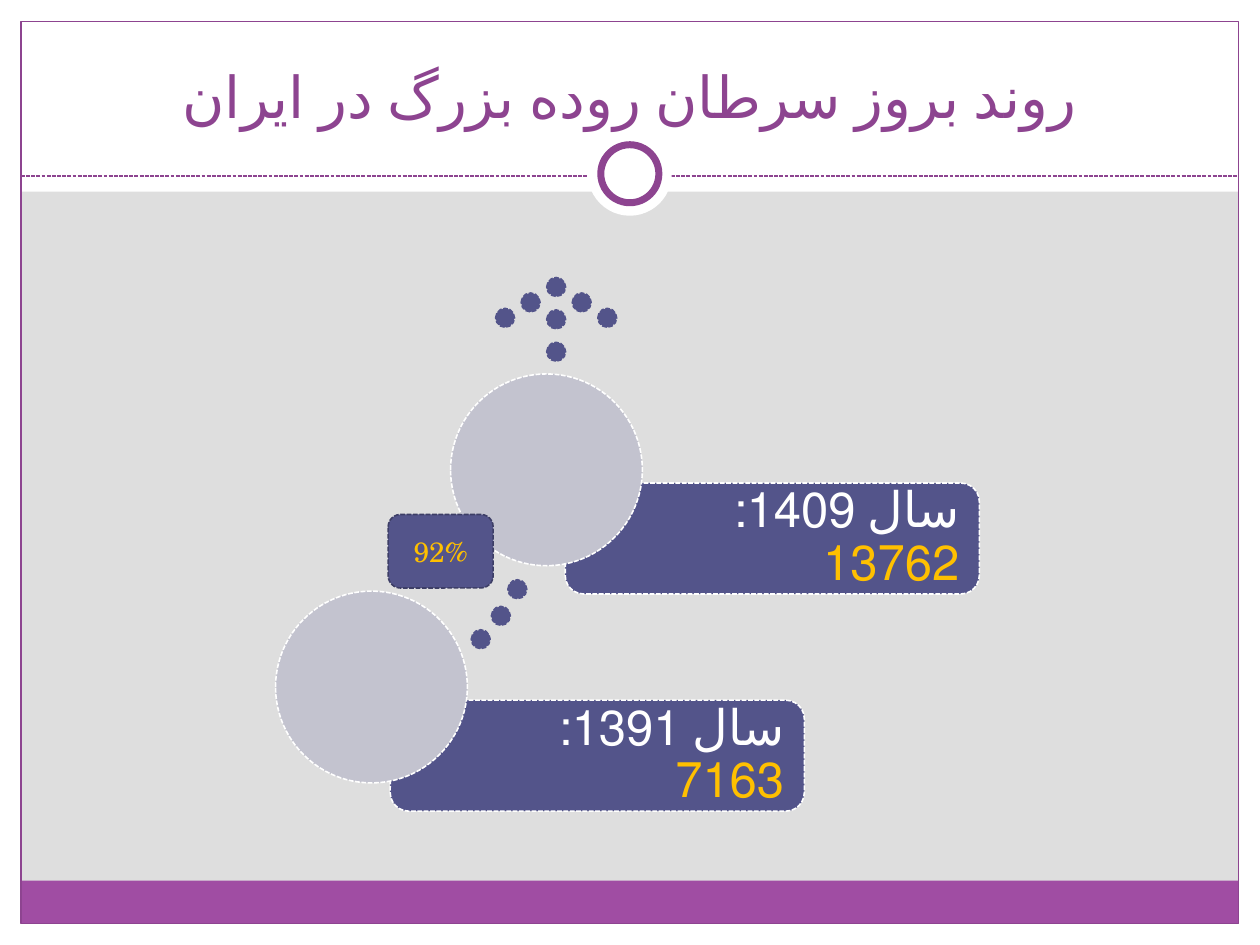
import pptx
import pptx.util
import pptx.dml.color
import pptx.enum.dml
import pptx.enum.shapes
import pptx.enum.text
import pptx.oxml
import pptx.oxml.ns

Pt = pptx.util.Pt
RGB = pptx.dml.color.RGBColor
KIND = pptx.enum.shapes.MSO_SHAPE
ALIGN = pptx.enum.text.PP_ALIGN
ANCHOR = pptx.enum.text.MSO_ANCHOR
DASH = pptx.enum.dml.MSO_LINE.SQUARE_DOT

WHITE = RGB(0xFF, 0xFF, 0xFF)
GREY = RGB(0xDE, 0xDE, 0xDE)
PURPLE = RGB(0x8D, 0x44, 0x90)
BAND = RGB(0xA0, 0x4D, 0xA3)
INDIGO = RGB(0x53, 0x54, 0x8A)
DARK = RGB(0x3D, 0x3E, 0x66)
PALE = RGB(0xC3, 0xC3, 0xCF)
GOLD = RGB(0xFF, 0xC0, 0x00)
FONT = "TeX Gyre Schola"
WIDE, HIGH = 720, 540
DOT = 10.8


def add_shape(slide, kind, box, fill=None, line=None, width=0.9, dash=False):
    shape = slide.shapes.add_shape(kind, *map(Pt, box))
    shape.shadow.inherit = False
    if fill is None:
        shape.fill.background()
    else:
        shape.fill.solid()
        shape.fill.fore_color.rgb = fill
    if line is None:
        shape.line.fill.background()
    else:
        shape.line.color.rgb = line
        shape.line.width = Pt(width)
        if dash:
            shape.line.dash_style = DASH
    return shape


def add_run(para, text, size, color, lang="fa-IR"):
    run = para.add_run()
    run.text = text
    run.font.size = Pt(size)
    run.font.name = FONT
    run.font.color.rgb = color
    run._r.get_or_add_rPr().set("lang", lang)


def add_frame(slide, box):
    """Draw white margins, the border, the footer band and the ringed rule."""
    left, top, wide, high = box
    right, base = left + wide, top + high
    rule, mid = 100.6, left + wide / 2
    for edge in ((0, base, WIDE, HIGH - base), (0, 0, WIDE, 109.6),
                 (0, 0, left, HIGH), (right, 0, WIDE - right, HIGH)):
        add_shape(slide, KIND.RECTANGLE, edge, WHITE)
    add_shape(slide, KIND.RECTANGLE, (left, base - 24.5, wide, 24.5), BAND)
    add_shape(slide, KIND.RECTANGLE, box, None, PURPLE, 0.75)
    line = slide.shapes.add_connector(
        pptx.enum.shapes.MSO_CONNECTOR.STRAIGHT,
        Pt(left), Pt(rule), Pt(right), Pt(rule))
    line.line.color.rgb = PURPLE
    line.line.width = Pt(0.75)
    line.line.dash_style = DASH
    props = line._element.spPr
    props.append(pptx.oxml.parse_xml(
        "<a:effectLst %s/>" % pptx.oxml.ns.nsdecls("a")))
    for size, edge in ((48, None), (33.2, PURPLE)):
        ring = (mid - size / 2, 99.3 - size / 2, size, size)
        add_shape(slide, KIND.OVAL, ring, WHITE, edge, 4)


def add_title(slide, box, text):
    title = slide.shapes.title
    title.left, title.top, title.width, title.height = map(Pt, box)
    frame = title.text_frame
    frame.word_wrap = True
    frame.vertical_anchor = ANCHOR.BOTTOM
    para = frame.paragraphs[0]
    para.alignment = ALIGN.CENTER
    add_run(para, text, 33, PURPLE)
    tree = title._element.getparent()
    tree.append(title._element)  # bring in front of the frame


def add_dots(slide, left, top, spots):
    for x, y in spots:
        add_shape(slide, KIND.OVAL, (left + x, top + y, DOT, DOT),
                  INDIGO, INDIGO, dash=True)


def add_arrow(slide, left, top):
    """Draw a dotted arrowhead and its stem."""
    step, drop, stem = 14.6, 8.8, 18.5
    head = [(i * step, abs(i - 2) * drop) for i in range(5)]
    add_dots(slide, left, top, head + [(2 * step, i * stem) for i in (1, 2)])


def add_year(slide, left, top, label, count):
    """Draw a bar with the year and its cases, and a disc over its corner."""
    x, y, wide, high, pad = left + 65.5, top + 62.3, 236.6, 63.4, 3.1
    add_shape(slide, KIND.ROUNDED_RECTANGLE, (x, y, wide, high),
              INDIGO, WHITE, dash=True)
    note = slide.shapes.add_textbox(
        *map(Pt, (x + pad, y + pad, wide - 2 * pad, high - 2 * pad)))
    frame = note.text_frame
    frame.word_wrap = True
    frame.vertical_anchor = ANCHOR.MIDDLE
    frame.margin_left = Pt(50.4)
    frame.margin_right = frame.margin_top = frame.margin_bottom = Pt(8.4)
    para = frame.paragraphs[0]
    para.alignment = ALIGN.RIGHT
    para.line_spacing = 0.9
    para._p.get_or_add_pPr().set("rtl", "1")
    add_run(para, label, 28, WHITE)
    add_run(para, count, 28, GOLD)
    add_shape(slide, KIND.OVAL, (left, top, 109.6, 109.6),
              PALE, WHITE, dash=True)


def add_badge(slide, box, text):
    shape = add_shape(slide, KIND.ROUNDED_RECTANGLE, box,
                      INDIGO, DARK, dash=True)
    shape.text_frame.vertical_anchor = ANCHOR.MIDDLE
    para = shape.text_frame.paragraphs[0]
    para.alignment = ALIGN.CENTER
    add_run(para, text, 16, GOLD, "en-US")


def main():
    deck = pptx.Presentation()
    deck.slide_width, deck.slide_height = Pt(WIDE), Pt(HIGH)
    slide = deck.slides.add_slide(deck.slide_layouts[5])
    slide.background.fill.solid()
    slide.background.fill.fore_color.rgb = GREY
    add_frame(slide, (12, 12.2, 695.8, 515.6))
    add_title(slide, (24, 18, 672, 60), "روند بروز سرطان روده بزرگ در ایران")
    add_dots(slide, 269.3, 331.3, [(20.9, 0), (11.5, 15.2), (0, 28.6)])
    add_arrow(slide, 283.2, 158.6)
    add_year(slide, 157.5, 337.8, "سال 1391: ", "7163")
    add_year(slide, 257.5, 213.7, "سال 1409: ", "13762")
    add_badge(slide, (221.8, 294, 60, 42), "92%")
    deck.save("out.pptx")


if __name__ == "__main__":
    main()
